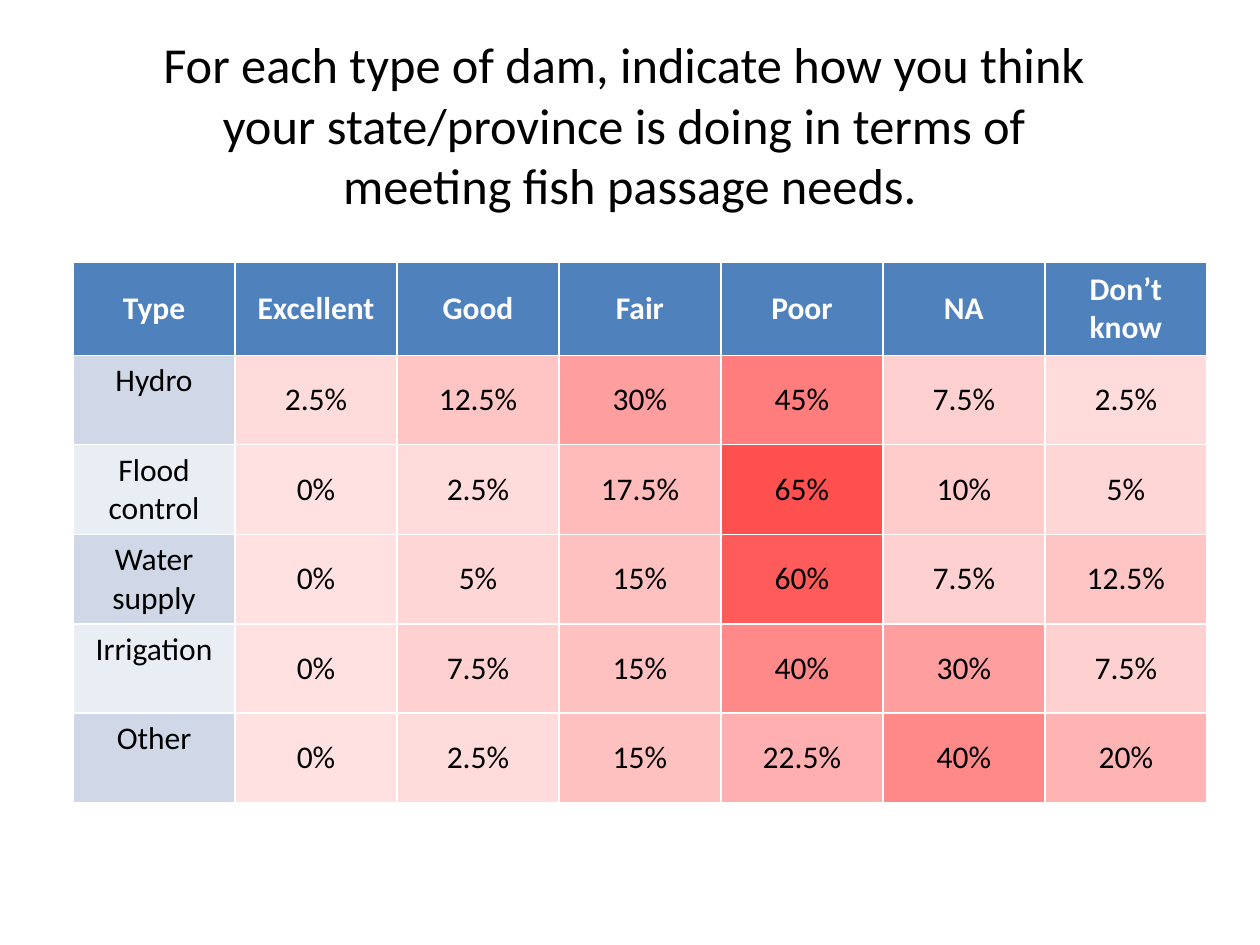
from pptx import Presentation
from pptx.dml.color import RGBColor
from pptx.enum.text import MSO_ANCHOR as Anchor, MSO_AUTO_SIZE as Fit, PP_ALIGN as Align
from pptx.util import Inches, Pt

WIDE, HIGH = Inches(10), Inches(7.5)
TITLE = [
    "For each type of dam, indicate how you think ",
    "your state/province is doing in terms of ",
    "meeting fish passage needs.",
]
HEADS = ["Type", "Excellent", "Good", "Fair", "Poor", "NA", "Don’t know"]
RATES = {
    "Hydro": [2.5, 12.5, 30, 45, 7.5, 2.5],
    "Flood control": [0, 2.5, 17.5, 65, 10, 5],
    "Water supply": [0, 5, 15, 60, 7.5, 12.5],
    "Irrigation": [0, 7.5, 15, 40, 30, 7.5],
    "Other": [0, 2.5, 15, 22.5, 40, 20],
}
TOP_RATE = 65
BANDS = ["D0D8E8", "E9EDF4"]


def color(code):
    """Turn a hex string into a colour."""
    return RGBColor.from_string(code)


def shade(rate):
    """Scale from pale pink at zero to red at the top rate."""
    tint = round(225 - (225 - 80) * rate / TOP_RATE)
    return f"FF{tint:02X}{tint:02X}"


def add_run(para, text, size, ink="000000", bold=False):
    """Add one styled run to a paragraph."""
    run = para.add_run()
    run.text = text
    font = run.font
    font.name, font.size, font.bold = "Calibri", Pt(size), bold
    font.color.rgb = color(ink)


def add_title(slide):
    """Place the title and break its lines."""
    title = slide.shapes.title
    title.left, title.top = int(WIDE * 0.05), int(HIGH * 0.04)
    title.width, title.height = int(WIDE * 0.9), Inches(1.37)
    frame = title.text_frame
    frame.word_wrap, frame.auto_size = True, Fit.NONE
    frame.vertical_anchor = Anchor.MIDDLE
    para = frame.paragraphs[0]
    para.alignment = Align.CENTER
    for row, line in enumerate(TITLE):
        if row:
            para.add_line_break()
        add_run(para, line, 28.8)


def fill_cell(cell, text, fill, anchor=Anchor.MIDDLE, **style):
    """Fill one table cell with centred text."""
    cell.fill.solid()
    cell.fill.fore_color.rgb = color(fill)
    cell.vertical_anchor = anchor
    para = cell.text_frame.paragraphs[0]
    para.alignment = Align.CENTER
    add_run(para, text, 18, **style)


def add_rates(slide):
    """Add the table of ratings by dam type."""
    head, body = Inches(0.74), Inches(0.71)
    table = slide.shapes.add_table(
        len(RATES) + 1, len(HEADS), Inches(0.58), Inches(2.08),
        int(WIDE * 0.9), head + body * len(RATES),
    ).table
    for row in table.rows:
        row.height = body
    table.rows[0].height = head
    for col, text in enumerate(HEADS):
        fill_cell(table.cell(0, col), text, "4F81BD", ink="FFFFFF", bold=True)
    for row, (kind, rates) in enumerate(RATES.items(), 1):
        fill_cell(table.cell(row, 0), kind, BANDS[(row - 1) % 2], Anchor.TOP)
        for col, rate in enumerate(rates, 1):
            fill_cell(table.cell(row, col), f"{rate:g}%", shade(rate))


def main():
    """Build and save the slide."""
    deck = Presentation()
    deck.slide_width, deck.slide_height = WIDE, HIGH
    slide = deck.slides.add_slide(deck.slide_layouts[5])
    add_title(slide)
    add_rates(slide)
    deck.save("out.pptx")


if __name__ == "__main__":
    main()
